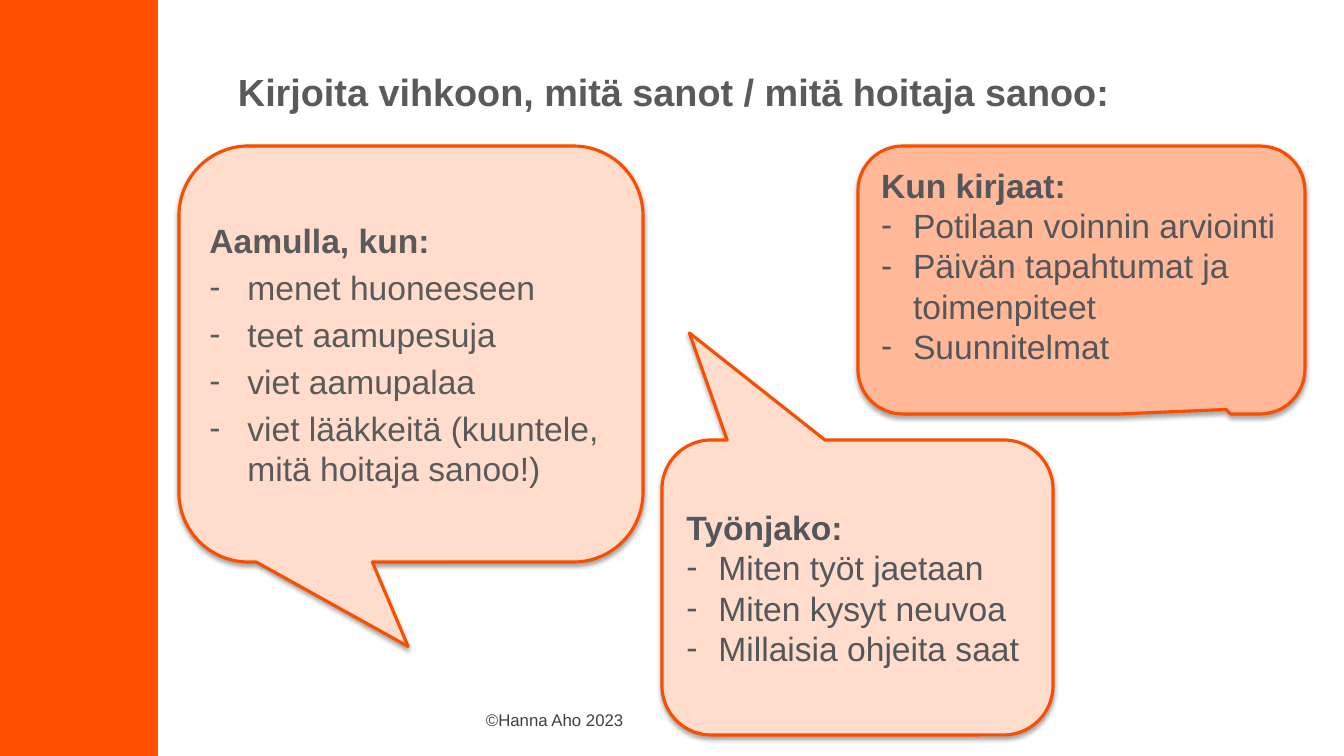
from lxml import etree
from pptx import Presentation
from pptx import util as u
from pptx.dml.color import RGBColor
from pptx.enum import shapes, text
from pptx.oxml.ns import qn

SLIDE = (1344, 756)
SCALE = 12192000 / SLIDE[0]
ORANGE, OUTLINE = "FF5000", "F94E00"
GREY, SLATE = "5A5A5A", "53565A"

BAR = (0, 0, 158, 756)
TITLE = ("Kirjoita vihkoon, mitä sanot / mitä hoitaja sanoo:", (228, 59, 1077, 60))
FOOTER = ("©Hanna Aho 2023", (476, 705, 197, 30))

CALLOUTS = [
    dict(box=(179, 146, 464, 416), tail=(-0.006, 0.703), fill="FFDCCC",
         color=GREY, indent=38, gap=4.8, bottom=5, heading="Aamulla, kun:",
         items=["menet huoneeseen", "teet aamupesuja", "viet aamupalaa",
                "viet lääkkeitä (kuuntele, mitä hoitaja sanoo!)"]),
    dict(box=(662, 440, 391, 295), tail=(-0.43, -0.863), fill="FFDCCC",
         color=SLATE, indent=32, gap=0, bottom=5, heading="Työnjako:",
         items=["Miten työt jaetaan", "Miten kysyt neuvoa",
                "Millaisia ohjeita saat"]),
    dict(box=(858, 146, 447, 268), tail=(0.324, 0.483), fill="FFB999",
         color=SLATE, indent=32, gap=0, bottom=34, heading="Kun kirjaat:",
         items=["Potilaan voinnin arviointi",
                "Päivän tapahtumat ja toimenpiteet", "Suunnitelmat"]),
]


def px(length):
    return u.Emu(round(length * SCALE))


def place(box):
    return [px(length) for length in box]


def rgb(value):
    return RGBColor.from_string(value)


def set_frame(shape, anchor, bottom=5):
    frame = shape.text_frame
    frame.word_wrap = True
    frame.vertical_anchor = anchor
    frame.margin_left = frame.margin_right = px(10)
    frame.margin_top, frame.margin_bottom = px(5), px(bottom)
    return frame


def write(paragraph, words, size, color, bold=False):
    paragraph.text = words
    paragraph.alignment = text.PP_ALIGN.LEFT
    font = paragraph.font
    font.name, font.size, font.bold = "Arial", u.Pt(size), bold
    font.color.rgb = rgb(color)


def add_dash(paragraph, indent):
    properties = paragraph._p.get_or_add_pPr()
    properties.set("marL", str(px(indent)))
    properties.set("indent", str(-px(indent)))
    etree.SubElement(properties, qn("a:buFont"), typeface="Arial")
    etree.SubElement(properties, qn("a:buChar"), char="-")


def add_shadow(shape):
    effects = shape._element.spPr.find(qn("a:effectLst"))
    shadow = etree.SubElement(effects, qn("a:outerShdw"), blurRad="40000",
                              dist="23000", dir="5400000", rotWithShape="0")
    color = etree.SubElement(shadow, qn("a:srgbClr"), val="000000")
    etree.SubElement(color, qn("a:alpha"), val="35000")


def add_filled(slide, kind, box, fill):
    shape = slide.shapes.add_shape(kind, *place(box))
    shape.shadow.inherit = False
    shape.fill.solid()
    shape.fill.fore_color.rgb = rgb(fill)
    shape.line.fill.background()
    return shape


def add_label(slide, label, size, color, anchor, bold=False):
    words, box = label
    shape = slide.shapes.add_textbox(*place(box))
    write(set_frame(shape, anchor).paragraphs[0], words, size, color, bold)


def add_callout(slide, callout):
    shape = add_filled(slide, shapes.MSO_SHAPE.ROUNDED_RECTANGULAR_CALLOUT,
                       callout["box"], callout["fill"])
    for index, value in enumerate((*callout["tail"], 0.167)):
        shape.adjustments[index] = value
    shape.line.color.rgb = rgb(OUTLINE)
    shape.line.width = u.Pt(2.25)
    add_shadow(shape)
    frame = set_frame(shape, text.MSO_ANCHOR.MIDDLE, callout["bottom"])
    write(frame.paragraphs[0], callout["heading"], 24, callout["color"], True)
    for item in callout["items"]:
        paragraph = frame.add_paragraph()
        paragraph.space_before = u.Pt(callout["gap"])
        add_dash(paragraph, callout["indent"])
        write(paragraph, item, 24, callout["color"])


def main():
    presentation = Presentation()
    presentation.slide_width, presentation.slide_height = place(SLIDE)
    slide = presentation.slides.add_slide(presentation.slide_layouts[6])
    add_filled(slide, shapes.MSO_SHAPE.RECTANGLE, BAR, ORANGE)
    add_label(slide, TITLE, 27, GREY, text.MSO_ANCHOR.BOTTOM, True)
    for callout in CALLOUTS:
        add_callout(slide, callout)
    add_label(slide, FOOTER, 12, "3E4043", text.MSO_ANCHOR.TOP)
    presentation.save("out.pptx")


if __name__ == "__main__":
    main()
